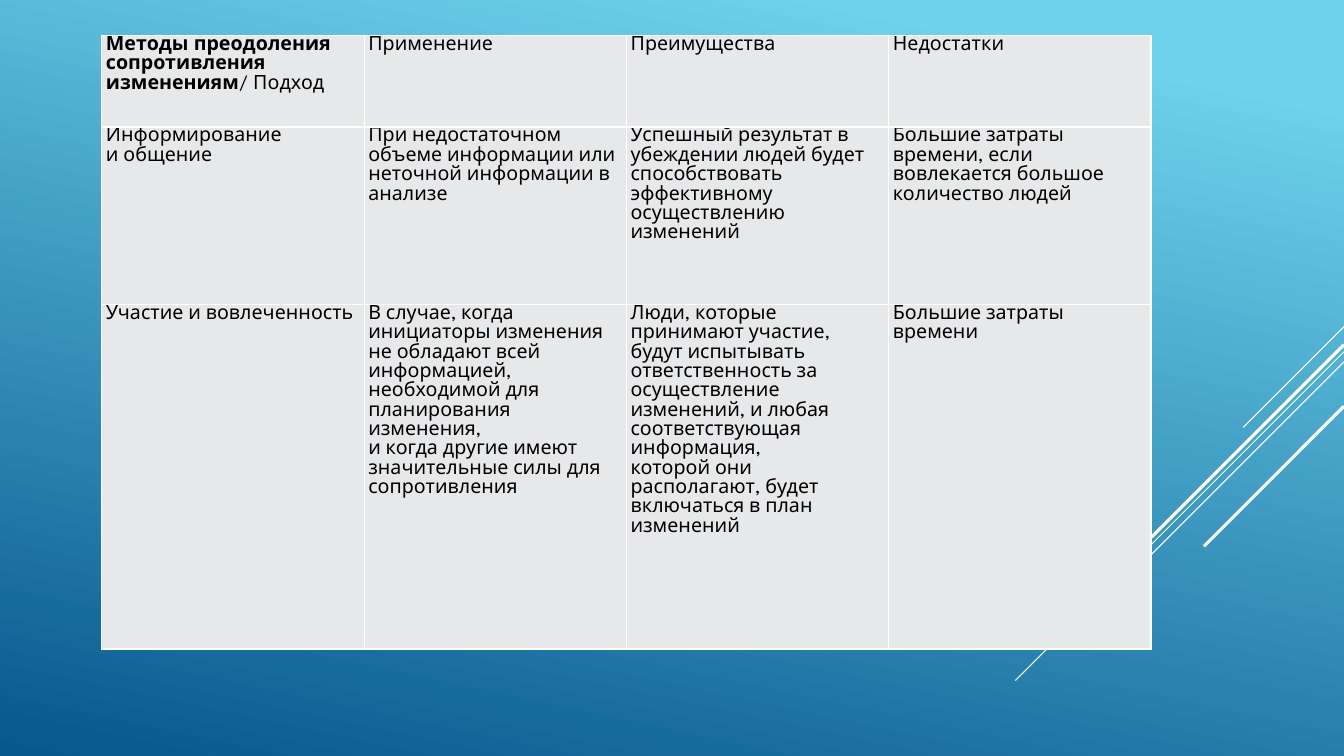
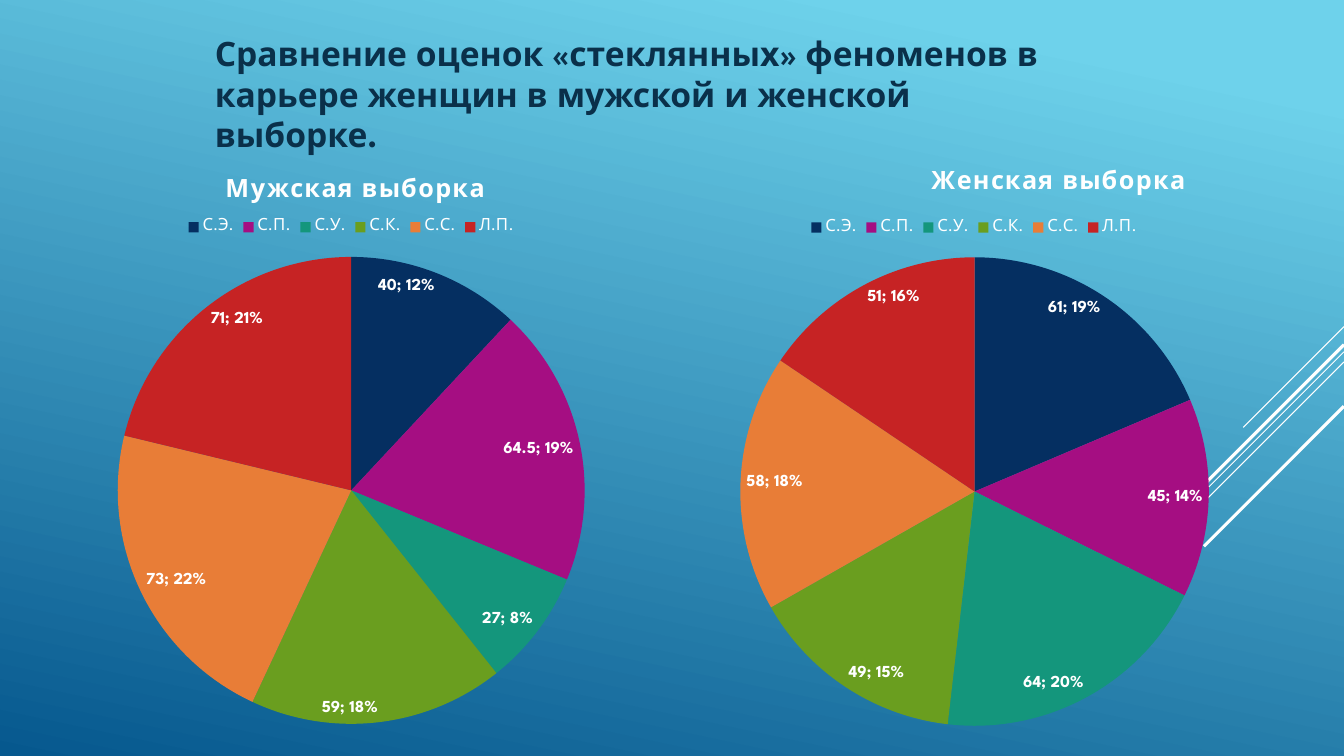
from dataclasses import dataclass

from lxml.etree import SubElement
from pptx import Presentation
from pptx.chart.data import CategoryChartData
from pptx.dml.color import RGBColor
from pptx.enum.chart import XL_CHART_TYPE as ChartType
from pptx.enum.chart import XL_LABEL_POSITION as LabelPosition
from pptx.enum.chart import XL_LEGEND_POSITION as LegendPosition
from pptx.enum.shapes import MSO_CONNECTOR as Connector
from pptx.enum.text import MSO_ANCHOR as Anchor
from pptx.enum.text import MSO_AUTO_SIZE as AutoSize
from pptx.enum.text import PP_ALIGN as Align
from pptx.oxml import parse_xml
from pptx.oxml.ns import nsdecls, qn
from pptx.util import Pt


# Theme
@dataclass(frozen=True)
class Theme:
    font: str = "League Spartan"
    white: str = "FFFFFF"
    black: str = "000000"
    title: str = "0A304A"
    cell: str = "E7E8EA"
    gradient: tuple = ((0.1, "6ED2EB"), (1, "06588E"))
    gradient_angle: int = 258
    slices: tuple = ("052F61", "A50E82", "14967C", "6A9E1F", "E87D37", "C62324")
    title_size: int = 24
    chart_title_size: int = 18
    table_size: int = 14
    label_size: int = 12


WIDTH, HEIGHT = 960, 540
LAYOUT_TITLE_ONLY, LAYOUT_BLANK = 5, 6

# Diagonals from the right edge: start height, horizontal run, line width
DIAGONALS = (
    (233.3, 72, 0.75),
    (251.3, 234.7, 0.75),
    (258.5, 149, 0.75),
    (246.2, 137.5, 2.25),
    (290.2, 100, 2.25),
)


def color(value):
    return RGBColor.from_string(value)


def set_layout(element, index, x, y, width=None, height=None):
    """Place a chart part by fractions of the chart area."""
    for old in element.findall(qn("c:layout")):
        element.remove(old)
    layout = parse_xml(f"<c:layout {nsdecls('c')}/>")
    manual = SubElement(layout, qn("c:manualLayout"))
    if element.tag == qn("c:plotArea"):
        SubElement(manual, qn("c:layoutTarget")).set("val", "inner")
    for mode in ("xMode", "yMode"):
        SubElement(manual, qn(f"c:{mode}")).set("val", "edge")
    for name, value in (("x", x), ("y", y), ("w", width), ("h", height)):
        if value is not None:
            SubElement(manual, qn(f"c:{name}")).set("val", f"{value:.3f}")
    element.insert(index, layout)


class Deck:
    """Holds the style and the current slide."""

    def __init__(self, theme):
        self.theme = theme
        self.presentation = Presentation()
        self.presentation.slide_width = Pt(WIDTH)
        self.presentation.slide_height = Pt(HEIGHT)
        self.slide = None

    def set_font(self, font, size, value, bold=False):
        font.name = self.theme.font
        font.size = Pt(size)
        font.bold = bold
        font.color.rgb = color(value)

    def add_slide(self, layout):
        layouts = self.presentation.slide_layouts
        self.slide = self.presentation.slides.add_slide(layouts[layout])
        fill = self.slide.background.fill
        fill.gradient()
        fill.gradient_angle = self.theme.gradient_angle
        for stop, (position, value) in zip(fill.gradient_stops, self.theme.gradient):
            stop.position = position
            stop.color.rgb = color(value)
        for top, run, width in DIAGONALS:
            self.add_line(WIDTH, top, WIDTH - run, top + run, width)

    def add_line(self, x1, y1, x2, y2, width):
        line = self.slide.shapes.add_connector(
            Connector.STRAIGHT, Pt(x1), Pt(y1), Pt(x2), Pt(y2))
        line.line.color.rgb = color(self.theme.white)
        line.line.width = Pt(width)
        SubElement(line._element.spPr, qn("a:effectLst"))

    def add_title(self, text, left, top, width, height):
        title = self.slide.shapes.title
        title.left, title.top = Pt(left), Pt(top)
        title.width, title.height = Pt(width), Pt(height)
        frame = title.text_frame
        frame.text = text
        frame.word_wrap = True
        frame.auto_size = AutoSize.NONE
        frame.vertical_anchor = Anchor.TOP
        paragraph = frame.paragraphs[0]
        paragraph.alignment = Align.LEFT
        self.set_font(paragraph.font, self.theme.title_size, self.theme.title, True)

    def add_table(self, rows, left, top, width, heights):
        columns = len(rows[0])
        table = self.slide.shapes.add_table(
            len(rows), columns, Pt(left), Pt(top), Pt(width), Pt(sum(heights))).table
        table.first_row = table.horz_banding = False
        for column in table.columns:
            column.width = Pt(width / columns)
        for row, height, texts in zip(table.rows, heights, rows):
            row.height = Pt(height)
            for cell, text in zip(row.cells, texts):
                self.fill_cell(cell, text)

    def fill_cell(self, cell, text):
        cell.margin_left = cell.margin_right = Pt(3)
        cell.margin_top = cell.margin_bottom = 0
        properties = cell._tc.get_or_add_tcPr()
        for side in ("lnL", "lnR", "lnT", "lnB"):
            border = SubElement(properties, qn(f"a:{side}"), w=str(Pt(1)))
            fill = SubElement(border, qn("a:solidFill"))
            SubElement(fill, qn("a:srgbClr")).set("val", self.theme.white)
        cell.fill.solid()
        cell.fill.fore_color.rgb = color(self.theme.cell)
        # A pair of texts is a bold run followed by a plain one
        bold, plain = text if isinstance(text, tuple) else ("", text)
        cell.text_frame.text = bold or plain
        for paragraph in cell.text_frame.paragraphs:
            paragraph.line_spacing = 1.07
            self.set_font(paragraph.font, self.theme.table_size, self.theme.black)
        if bold:
            paragraph.runs[0].font.bold = True
            paragraph.add_run().text = plain

    def add_pie(self, title, categories, values, box, title_at):
        theme = self.theme
        left, top, width, height = box
        data = CategoryChartData()
        data.categories = categories
        data.add_series("Series 1", values)
        chart = self.slide.shapes.add_chart(
            ChartType.PIE, Pt(left), Pt(top), Pt(width), Pt(height), data).chart
        self.set_font(chart.font, 10, theme.white)
        chart._chartSpace.chart.addnext(parse_xml(
            f"<c:spPr {nsdecls('c', 'a')}><a:noFill/><a:ln><a:noFill/></a:ln></c:spPr>"))

        # Title
        chart.has_title = True
        frame = chart.chart_title.text_frame
        frame.text = title
        font = frame.paragraphs[0].runs[0].font
        self.set_font(font, theme.chart_title_size, theme.white, True)
        font._element.set("spc", "100")
        set_layout(chart.chart_title._element, 1, *title_at)

        # Legend
        chart.has_legend = True
        legend = chart.legend
        legend.position = LegendPosition.TOP
        legend.include_in_layout = False
        self.set_font(legend.font, theme.label_size, theme.white)
        legend_width = 246 / width
        set_layout(legend._element, 1, (1 - legend_width) / 2, 0.1, legend_width, 0.05)

        # Slices: a centred square, four fifths of the chart height
        plot = chart.plots[0]
        plot.vary_by_categories = True
        side = 0.8 * height / width
        set_layout(chart._chartSpace.chart.plotArea, 0, (1 - side) / 2, 0.176, side, 0.8)
        for index, value in enumerate(theme.slices):
            point = plot.series[0].points[index]
            point.format.fill.solid()
            point.format.fill.fore_color.rgb = color(value)
            point.format.line.fill.background()

        # Labels
        plot.has_data_labels = True
        labels = plot.data_labels
        labels.show_value = labels.show_percentage = True
        labels.position = LabelPosition.INSIDE_END
        self.set_font(labels.font, theme.label_size, theme.white, True)
        separator = parse_xml(f"<c:separator {nsdecls('c')}>; </c:separator>")
        labels._element.find(qn("c:showBubbleSize")).addnext(separator)


METHODS = (
    (("Методы преодоления сопротивления изменениям", "/ Подход"),
     "Применение", "Преимущества", "Недостатки"),
    ("Информирование\nи общение",
     "При недостаточном объеме информации или неточной информации в анализе",
     "Успешный результат в убеждении людей будет способствовать эффективному "
     "осуществлению изменений",
     "Большие затраты времени, если вовлекается большое количество людей"),
    ("Участие и вовлеченность",
     "В случае, когда инициаторы изменения не обладают всей информацией, "
     "необходимой для планирования изменения,\n"
     "и когда другие имеют значительные силы для сопротивления",
     "Люди, которые принимают участие, будут испытывать ответственность за "
     "осуществление изменений, и любая соответствующая информация,\n"
     "которой они располагают, будет включаться в план изменений",
     "Большие затраты времени"),
)

PHENOMENA = ("С.Э.", "С.П.", "С.У.", "С.К.", "С.С.", "Л.П.")

# Title, values, chart box, title position
SAMPLES = (
    ("Мужская выборка", (40, 64.5, 27, 59, 73, 71),
     (-41.8, 110.2, 585.4, 416.9), (0.341, 0.03)),
    ("Женская выборка", (61, 45, 64, 49, 58, 51),
     (453.6, 110.2, 484.6, 418.3), (0.43, 0.016)),
)


def main():
    deck = Deck(Theme())

    # Slide 1: methods of overcoming resistance
    deck.add_slide(LAYOUT_BLANK)
    deck.add_table(METHODS, 72.7, 25.2, 749.5, (65.5, 126.7, 246.2))

    # Slide 2: comparison of the two samples
    deck.add_slide(LAYOUT_TITLE_ONLY)
    deck.add_title(
        "Сравнение оценок «стеклянных» феноменов в карьере женщин "
        "в мужской и женской выборке.", 146.2, 20.2, 618.5, 65.5)
    for title, values, box, title_at in SAMPLES:
        deck.add_pie(title, PHENOMENA, values, box, title_at)

    deck.presentation.save("out.pptx")


if __name__ == "__main__":
    main()
